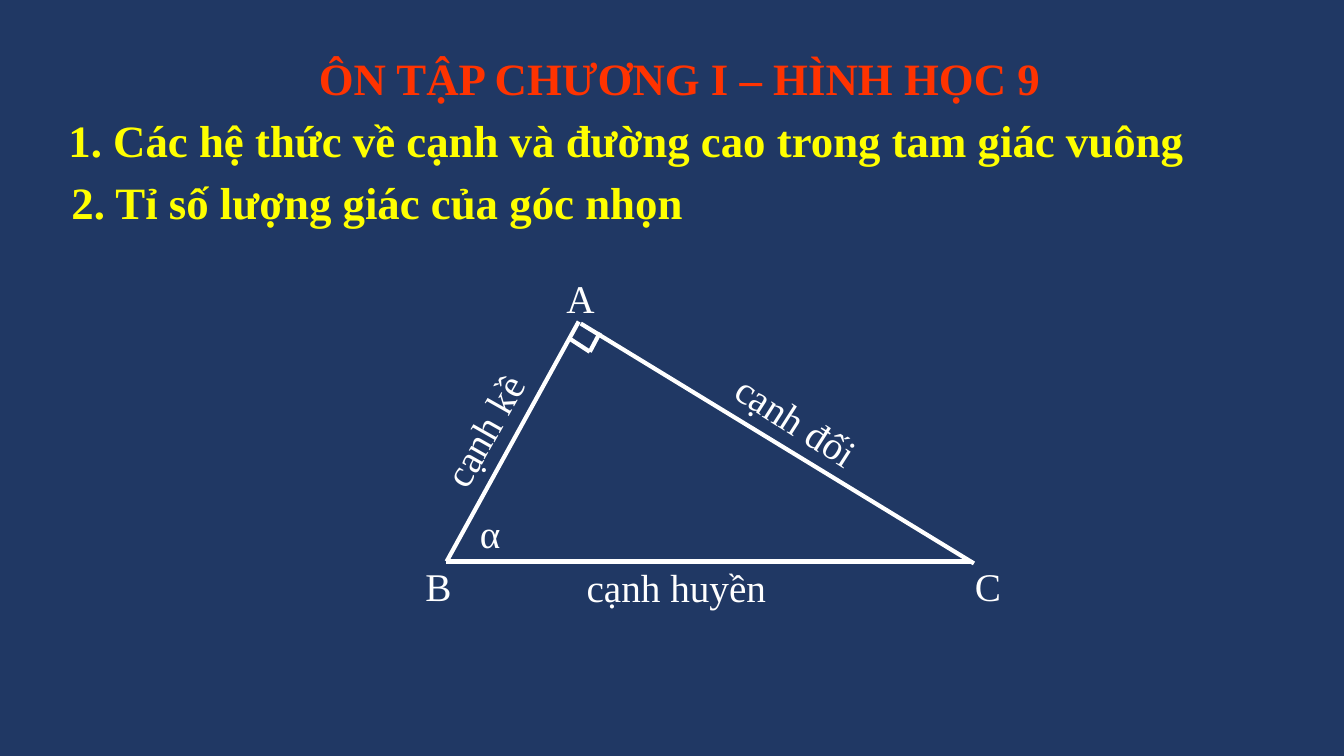
"""Build a geometry review slide with a labelled right triangle."""
from dataclasses import dataclass

from lxml.etree import SubElement
from pptx import Presentation
from pptx.dml.color import RGBColor
from pptx.enum.shapes import MSO_CONNECTOR
from pptx.enum.text import MSO_ANCHOR, MSO_AUTO_SIZE, PP_ALIGN
from pptx.oxml.ns import qn
from pptx.util import Inches, Pt


@dataclass(frozen=True)
class Theme:
    """Colours, font and sizes of the slide."""
    navy: RGBColor = RGBColor.from_string("203864")
    red: RGBColor = RGBColor.from_string("FF3300")
    yellow: RGBColor = RGBColor.from_string("FFFF00")
    white: RGBColor = RGBColor.from_string("FFFFFF")
    font: str = "Times New Roman"
    head: Pt = Pt(32)
    label: Pt = Pt(28)
    line: Pt = Pt(3)


theme = Theme()


def write(box, text, size, color, bold=False, align=PP_ALIGN.LEFT):
    """Fill a box with one styled line of text."""
    frame = box.text_frame
    frame.text = text
    frame.word_wrap = False
    frame.auto_size = MSO_AUTO_SIZE.SHAPE_TO_FIT_TEXT
    frame.vertical_anchor = MSO_ANCHOR.TOP
    para = frame.paragraphs[0]
    para.alignment = align
    para.line_spacing = 1.0
    para.space_before = Pt(0)
    font = para.runs[0].font
    font.name = theme.font
    font.size = size
    font.bold = bold
    font.color.rgb = color


deck = Presentation()
deck.slide_width = Inches(13.33)
deck.slide_height = Inches(7.5)
slide = deck.slides.add_slide(deck.slide_layouts[5])
slide.background.fill.solid()
slide.background.fill.fore_color.rgb = theme.navy

title = slide.shapes.title
title.left, title.top = Inches(2.92), Inches(0.45)
title.width, title.height = Inches(7.64), Inches(0.64)
write(title, "ÔN TẬP CHƯƠNG I – HÌNH HỌC 9", theme.head, theme.red, True, PP_ALIGN.CENTER)
title.text_frame.word_wrap = True

topics = [
    ("1. Các hệ thức về cạnh và đường cao trong tam giác vuông", 0.58, 1.07, 11.51),
    ("2. Tỉ số lượng giác của góc nhọn", 0.61, 1.68, 6.47),
]
for text, x, y, wide in topics:
    box = slide.shapes.add_textbox(Inches(x), Inches(y), Inches(wide), Inches(0.64))
    write(box, text, theme.head, theme.yellow, True)

edges = [
    (5.74, 3.19, 4.43, 5.57),
    (5.76, 3.21, 9.66, 5.59),
    (9.63, 5.57, 4.42, 5.57),
    (5.95, 3.3, 5.85, 3.49),
    (5.85, 3.49, 5.65, 3.36),
]
for edge in edges:
    line = slide.shapes.add_connector(MSO_CONNECTOR.STRAIGHT, *map(Inches, edge))
    line.line.color.rgb = theme.white
    line.line.width = theme.line
    SubElement(line._element.spPr, qn("a:effectLst"))

labels = [
    ("A", 5.52, 2.67, 0.49, 0),
    ("B", 4.12, 5.53, 0.46, 0),
    ("C", 9.57, 5.53, 0.46, 0),
    ("cạnh kề", 4.1, 3.98, 1.41, 299.5),
    ("cạnh đối", 7.14, 3.89, 1.54, 32.6),
    ("cạnh huyền", 5.72, 5.54, 2, 0),
    ("α", 4.66, 5, 0.45, 0),
]
for text, x, y, wide, turn in labels:
    box = slide.shapes.add_textbox(Inches(x), Inches(y), Inches(wide), Inches(0.57))
    box.rotation = turn
    write(box, text, theme.label, theme.white)

deck.save("out.pptx")
